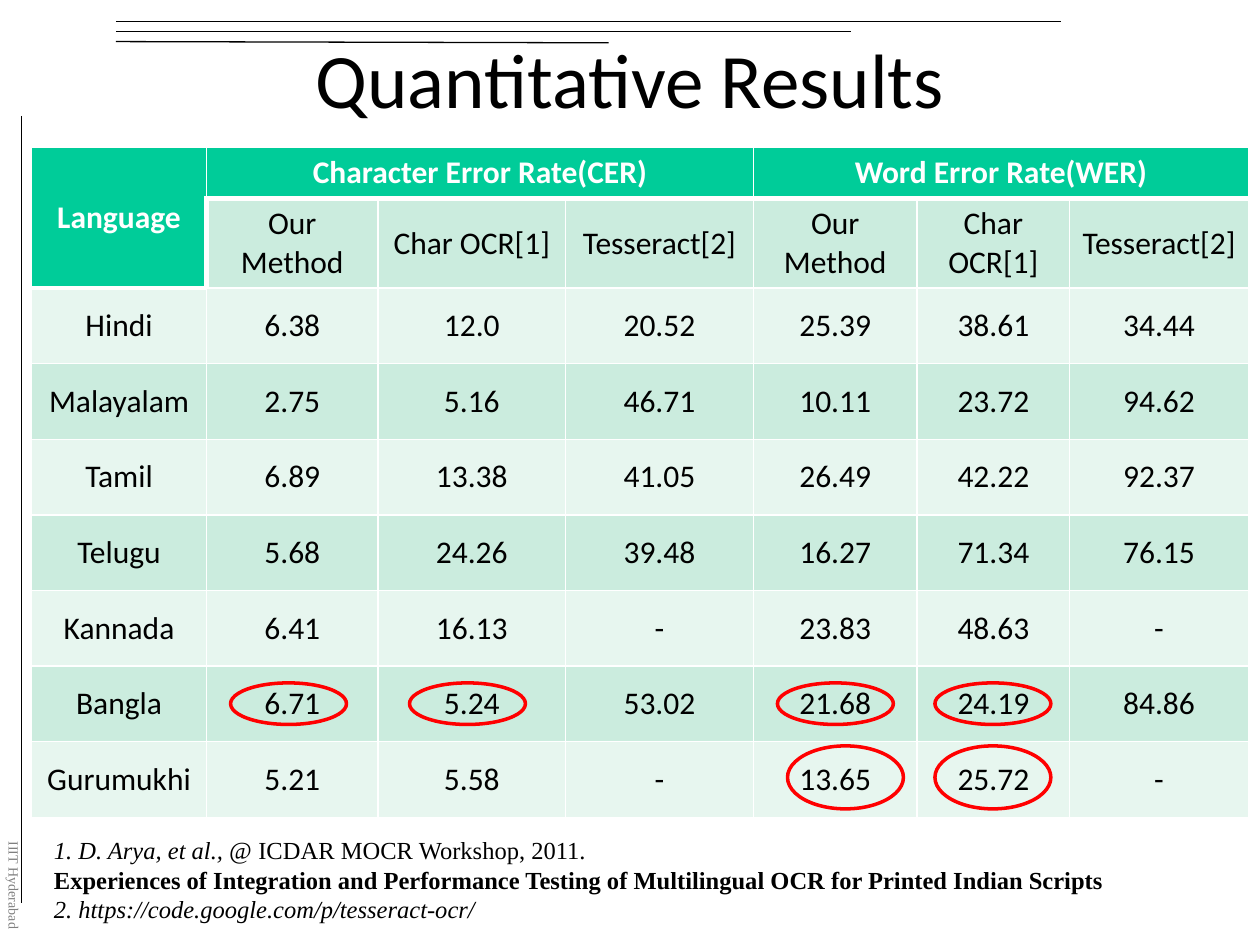
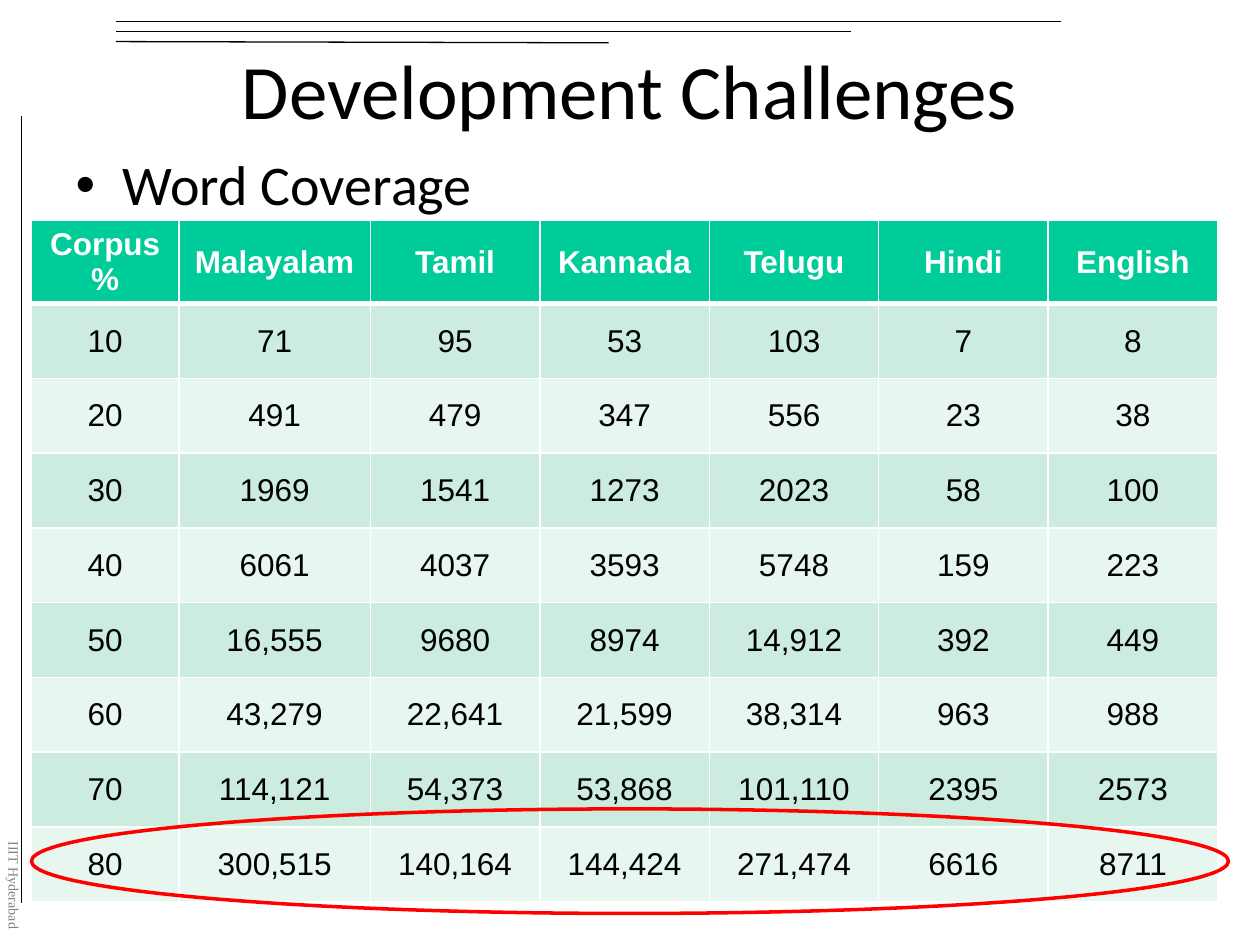
from lxml.etree import SubElement
from pptx import Presentation
from pptx.dml.color import RGBColor
from pptx.enum.shapes import MSO_CONNECTOR, MSO_SHAPE
from pptx.enum.text import MSO_ANCHOR, MSO_AUTO_SIZE, PP_ALIGN
from pptx.oxml.ns import qn
from pptx.util import Inches, Pt

COLORS = {
    "text": "000000",
    "header": "00CC99",
    "dark_band": "CBECDE",
    "light_band": "E7F6EF",
    "white": "FFFFFF",
    "highlight": "FF0000",
    "footer": "808080",
}
FRAME_LINES = [
    (0.92, 0.17, 8.42, 0.17),
    (0.92, 0.25, 6.75, 0.25),
    (0.92, 0.33, 4.83, 0.34),
    (0.17, 0.92, 0.17, 7.17),
]
TITLE_ONLY, TITLE_AND_CONTENT = 5, 1

ERROR_RATES = [
    ["Language", "Character Error Rate(CER)", "", "", "Word Error Rate(WER)", "", ""],
    ["", *["Our Method", "Char OCR[1]", "Tesseract[2]"] * 2],
    ["Hindi", "6.38", "12.0", "20.52", "25.39", "38.61", "34.44"],
    ["Malayalam", "2.75", "5.16", "46.71", "10.11", "23.72", "94.62"],
    ["Tamil", "6.89", "13.38", "41.05", "26.49", "42.22", "92.37"],
    ["Telugu", "5.68", "24.26", "39.48", "16.27", "71.34", "76.15"],
    ["Kannada", "6.41", "16.13", "-", "23.83", "48.63", "-"],
    ["Bangla", "6.71", "5.24", "53.02", "21.68", "24.19", "84.86"],
    ["Gurumukhi", "5.21", "5.58", "-", "13.65", "25.72", "-"],
]
WORD_COVERAGE = [
    ["Corpus %", "Malayalam", "Tamil", "Kannada", "Telugu", "Hindi", "English"],
    ["10", "71", "95", "53", "103", "7", "8"],
    ["20", "491", "479", "347", "556", "23", "38"],
    ["30", "1969", "1541", "1273", "2023", "58", "100"],
    ["40", "6061", "4037", "3593", "5748", "159", "223"],
    ["50", "16,555", "9680", "8974", "14,912", "392", "449"],
    ["60", "43,279", "22,641", "21,599", "38,314", "963", "988"],
    ["70", "114,121", "54,373", "53,868", "101,110", "2395", "2573"],
    ["80", "300,515", "140,164", "144,424", "271,474", "6616", "8711"],
]


def color(name):
    return RGBColor.from_string(COLORS[name])


class Deck:
    def __init__(self):
        self.presentation = Presentation()
        self.presentation.slide_width = Inches(10)
        self.presentation.slide_height = Inches(7.5)
        self.slide = None

    def add_slide(self, layout, title, title_top):
        layouts = self.presentation.slide_layouts
        self.slide = self.presentation.slides.add_slide(layouts[layout])
        for line in FRAME_LINES:
            self.add_line(*line)
        self.add_footer("IIIT Hyderabad")
        paragraph = self.fill_placeholder(
            self.slide.shapes.title, title, (0.5, title_top, 9, 1.57), 44)
        paragraph.alignment = PP_ALIGN.CENTER

    def style(self, font, size, name="Calibri", fill="text", bold=False):
        font.name = name
        font.size = Pt(size)
        font.bold = bold
        font.color.rgb = color(fill)

    def fill_placeholder(self, shape, text, box, size):
        shape.left, shape.top, shape.width, shape.height = map(Inches, box)
        shape.text_frame.text = text
        shape.text_frame.auto_size = MSO_AUTO_SIZE.NONE
        paragraph = shape.text_frame.paragraphs[0]
        self.style(paragraph.font, size)
        return paragraph

    def add_bullet_text(self, text, box):
        self.fill_placeholder(self.slide.placeholders[1], text, box, 32)

    def add_line(self, *ends):
        line = self.slide.shapes.add_connector(
            MSO_CONNECTOR.STRAIGHT, *map(Inches, ends))
        line.line.color.rgb = color("text")
        line.line.width = Pt(0.75)
        SubElement(line.element.spPr, qn("a:effectLst"))

    def add_text_box(self, *box):
        shape = self.slide.shapes.add_textbox(*map(Inches, box))
        shape.text_frame.word_wrap = True
        return shape

    def add_footer(self, text):
        shape = self.add_text_box(-0.1, 6.58, 0.33, 0.92)
        shape.element.find(".//" + qn("a:bodyPr")).set("vert", "eaVert")
        paragraph = shape.text_frame.paragraphs[0]
        paragraph.text = text
        self.style(paragraph.font, 8, "Times New Roman", "footer")

    def add_references(self, lines, box):
        frame = self.add_text_box(*box).text_frame
        for index, runs in enumerate(lines):
            paragraph = frame.add_paragraph() if index else frame.paragraphs[0]
            for text, bold, italic in runs:
                run = paragraph.add_run()
                run.text = text
                self.style(run.font, 14, "Times New Roman", bold=bold)
                run.font.italic = italic

    def add_ellipse(self, *box):
        shape = self.slide.shapes.add_shape(MSO_SHAPE.OVAL, *map(Inches, box))
        shape.shadow.inherit = False
        shape.fill.background()
        shape.line.color.rgb = color("highlight")
        shape.line.width = Pt(2)

    def add_border(self, cell, side, width):
        properties = cell._tc.get_or_add_tcPr()
        line = SubElement(properties, qn("a:ln" + side), w=str(Pt(width)))
        fill = SubElement(line, qn("a:solidFill"))
        SubElement(fill, qn("a:srgbClr"), val=COLORS["white"])

    def add_table(self, rows, position, widths, heights, font_name,
                  header_depths, merges=()):
        left, top = map(Inches, position)
        table = self.slide.shapes.add_table(
            len(rows), len(widths), left, top,
            Inches(sum(widths)), Inches(sum(heights))).table
        for column, width in zip(table.columns, widths):
            column.width = Inches(width)
        for row, height in zip(table.rows, heights):
            row.height = Inches(height)
        for row, values in enumerate(rows):
            for column, text in enumerate(values):
                cell = table.cell(row, column)
                depth = header_depths[column]
                is_header = row < depth
                after_header = column > 0 and depth <= row < header_depths[column - 1]
                thick = {"L": after_header, "R": False,
                         "T": row == depth, "B": row == depth - 1}
                for side, is_thick in thick.items():
                    self.add_border(cell, side, 3 if is_thick else 1)
                band = "dark_band" if row % 2 else "light_band"
                cell.fill.solid()
                cell.fill.fore_color.rgb = color("header" if is_header else band)
                cell.vertical_anchor = MSO_ANCHOR.MIDDLE
                cell.text = text
                paragraph = cell.text_frame.paragraphs[0]
                paragraph.alignment = PP_ALIGN.CENTER
                self.style(paragraph.font, 18, font_name,
                           "white" if is_header else "text", is_header)
        for first, last in merges:
            table.cell(*first).merge(table.cell(*last))


def build_results(deck):
    deck.add_slide(TITLE_ONLY, "Quantitative Results", -0.17)
    deck.add_table(
        ERROR_RATES, (0.25, 1.17),
        widths=[1.39, 1.36, 1.49, 1.49, 1.3, 1.21, 1.42],
        heights=[0.39, 0.71] + [0.6] * 7,
        font_name="Calibri",
        header_depths=[2] + [1] * 6,
        merges=[((0, 0), (1, 0)), ((0, 1), (0, 3)), ((0, 4), (0, 6))])
    for left in (1.83, 3.25, 6.17, 7.42):
        deck.add_ellipse(left, 5.42, 0.92, 0.33)
    for left in (6.25, 7.42):
        deck.add_ellipse(left, 5.92, 0.92, 0.5)
    deck.add_references([
        [("1. D. Arya, et al., @ ", False, True),
         ("ICDAR MOCR Workshop, 2011.", False, False)],
        [("Experiences of Integration and Performance Testing of "
          "Multilingual OCR for Printed Indian Scripts", True, False)],
        [("2. https://code.google.com/p/tesseract-ocr/", False, True)],
    ], (0.33, 6.58, 9.6, 0.81))


def build_challenges(deck):
    deck.add_slide(TITLE_AND_CONTENT, "Development Challenges", -0.08)
    deck.add_bullet_text("Word Coverage", (0.5, 1.14, 9, 5.79))
    deck.add_table(
        WORD_COVERAGE, (0.25, 1.75),
        widths=[1.17, 1.52] + [1.345] * 5,
        heights=[5.34 / len(WORD_COVERAGE)] * len(WORD_COVERAGE),
        font_name="Arial",
        header_depths=[1] * 7)
    deck.add_ellipse(0.25, 6.42, 9.5, 0.83)


def main():
    deck = Deck()
    build_results(deck)
    build_challenges(deck)
    deck.presentation.save("out.pptx")


if __name__ == "__main__":
    main()
